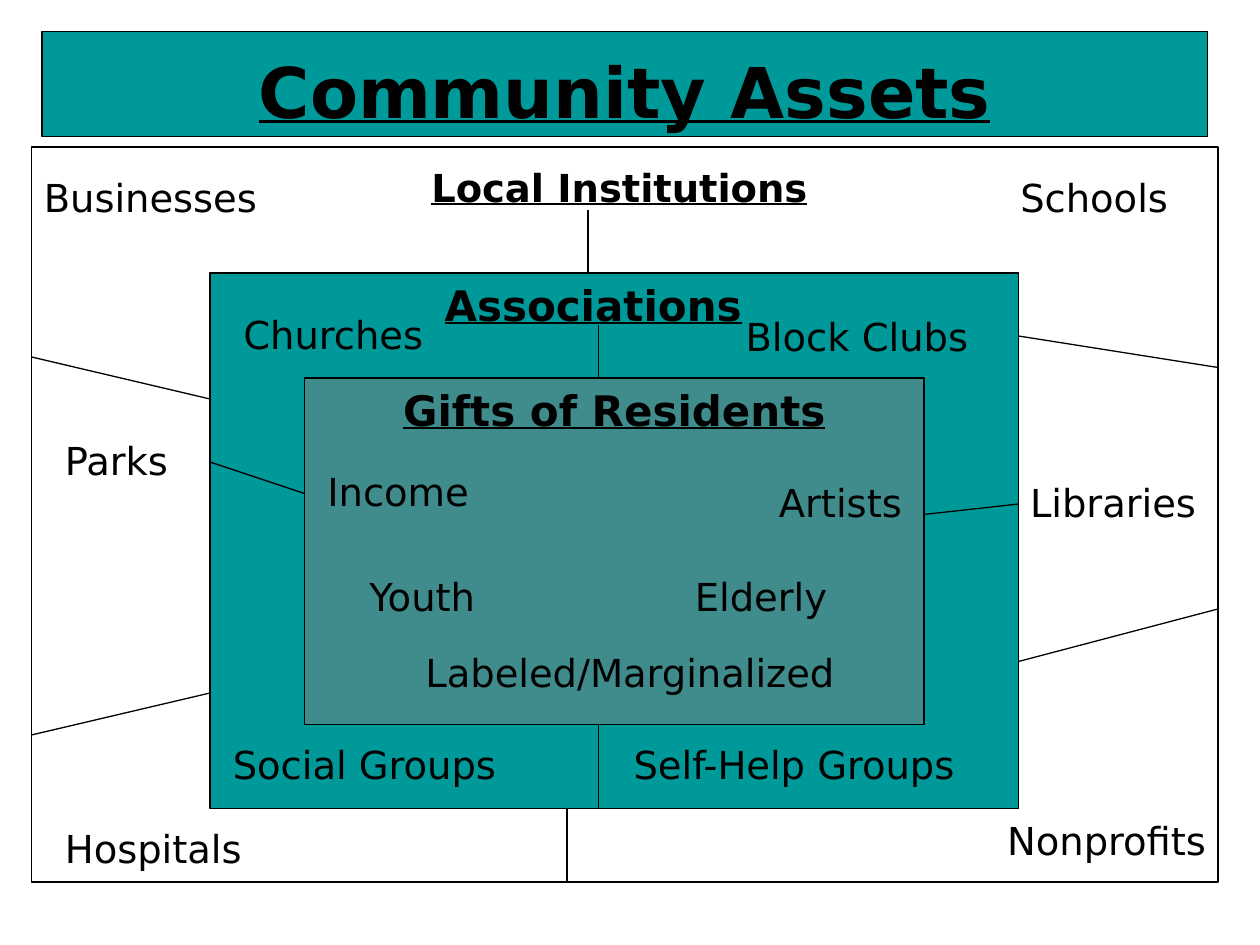
import pptx
import pptx.dml.color
import pptx.enum.shapes
import pptx.enum.text
import pptx.util
from lxml import etree
from pptx.oxml.ns import qn

FONT = "DejaVu Sans"
TEAL, GRAY, BLACK = "009999", "808080", "000000"

# left, top, width, height, fill, opacity in percent
BOXES = [
    (24, 18, 666, 60, TEAL, 100),
    (18, 84, 678, 420, None, 100),
    (120, 156, 462, 306, TEAL, 100),
    (174, 216, 354, 198, GRAY, 50),
]

# start x, start y, end x, end y
DIVIDERS = [
    (336, 120, 336, 156),
    (120, 228, 18, 204),
    (18, 420, 120, 396),
    (324, 462, 324, 504),
    (582, 378, 696, 348),
    (582, 192, 696, 210),
    (342, 186, 342, 216),
    (120, 264, 174, 282),
    (342, 414, 342, 462),
    (528, 294, 582, 288),
]

# text, left, top, width
TITLE = ("Community Assets", 18, 24, 678)
HEADINGS = [
    ("Local Institutions", 228, 90, 252, 22),
    ("Associations", 246, 156, 186, 24),
    ("Gifts of Residents", 216, 216, 270, 24),
]
ASSETS = [
    ("Businesses", 18, 96, 138),
    ("Schools", 576, 96, 114),
    ("Parks", 30, 246, 84),
    ("Libraries", 581.5, 270, 114.5),
    ("Hospitals", 30, 468, 120),
    ("Nonprofits", 568.5, 463.5, 133.5),
    ("Churches", 132, 174, 126),
    ("Block Clubs", 419, 175.5, 157),
    ("Social Groups", 126, 420, 210),
    ("Self-Help Groups", 355, 420, 221),
    ("Income", 180, 264, 114),
    ("Artists", 438, 270, 90),
    ("Youth", 204, 324, 78),
    ("Elderly", 390, 324, 96),
    ("Labeled/Marginalized", 236, 367.5, 248),
]


def points(*values):
    return [pptx.util.Pt(value) for value in values]


def color(hex_string):
    return pptx.dml.color.RGBColor.from_string(hex_string)


def set_line(shape):
    shape.line.color.rgb = color(BLACK)
    shape.line.width = pptx.util.Pt(0.75)


def add_box(slide, left, top, width, height, fill, opacity):
    shape = slide.shapes.add_shape(
        pptx.enum.shapes.MSO_SHAPE.RECTANGLE, *points(left, top, width, height))
    shape.shadow.inherit = False
    set_line(shape)
    if fill is None:
        shape.fill.background()
        return
    shape.fill.solid()
    shape.fill.fore_color.rgb = color(fill)
    if opacity < 100:
        fill_color = shape.element.spPr.find(qn("a:solidFill"))[0]
        etree.SubElement(fill_color, qn("a:alpha"), val=str(opacity * 1000))


def add_divider(slide, ends):
    connector = slide.shapes.add_connector(
        pptx.enum.shapes.MSO_CONNECTOR.STRAIGHT, *points(*ends))
    set_line(connector)
    etree.SubElement(connector.element.spPr, qn("a:effectLst"))


def write(shape, text, size=22, heading=False, centered=False):
    frame = shape.text_frame
    frame.word_wrap = True
    frame.auto_size = pptx.enum.text.MSO_AUTO_SIZE.SHAPE_TO_FIT_TEXT
    frame.vertical_anchor = pptx.enum.text.MSO_ANCHOR.TOP
    frame.text = text
    paragraph = frame.paragraphs[0]
    align = pptx.enum.text.PP_ALIGN
    paragraph.alignment = align.CENTER if centered else align.LEFT
    font = paragraph.runs[0].font
    font.name = FONT
    font.size = pptx.util.Pt(size)
    font.bold = heading
    font.underline = heading
    font.color.rgb = color(BLACK)


def add_label(slide, text, left, top, width, size=22, **style):
    height = size * 1.17 + 8
    box = slide.shapes.add_textbox(*points(left, top, width, height))
    write(box, text, size=size, **style)


def add_title(slide, text, left, top, width):
    title = slide.shapes.title
    title.left, title.top, title.width, title.height = points(left, top, width, 56)
    write(title, text, size=40, heading=True, centered=True)
    # The title lies on the banner, so it goes to the front.
    title.element.getparent().append(title.element)


def main():
    presentation = pptx.Presentation()
    presentation.slide_width, presentation.slide_height = points(720, 540)
    slide = presentation.slides.add_slide(presentation.slide_layouts[5])
    for box in BOXES:
        add_box(slide, *box)
    for ends in DIVIDERS:
        add_divider(slide, ends)
    for heading in HEADINGS:
        add_label(slide, *heading, heading=True, centered=True)
    for asset in ASSETS:
        add_label(slide, *asset)
    add_title(slide, *TITLE)
    presentation.save("out.pptx")


if __name__ == "__main__":
    main()
